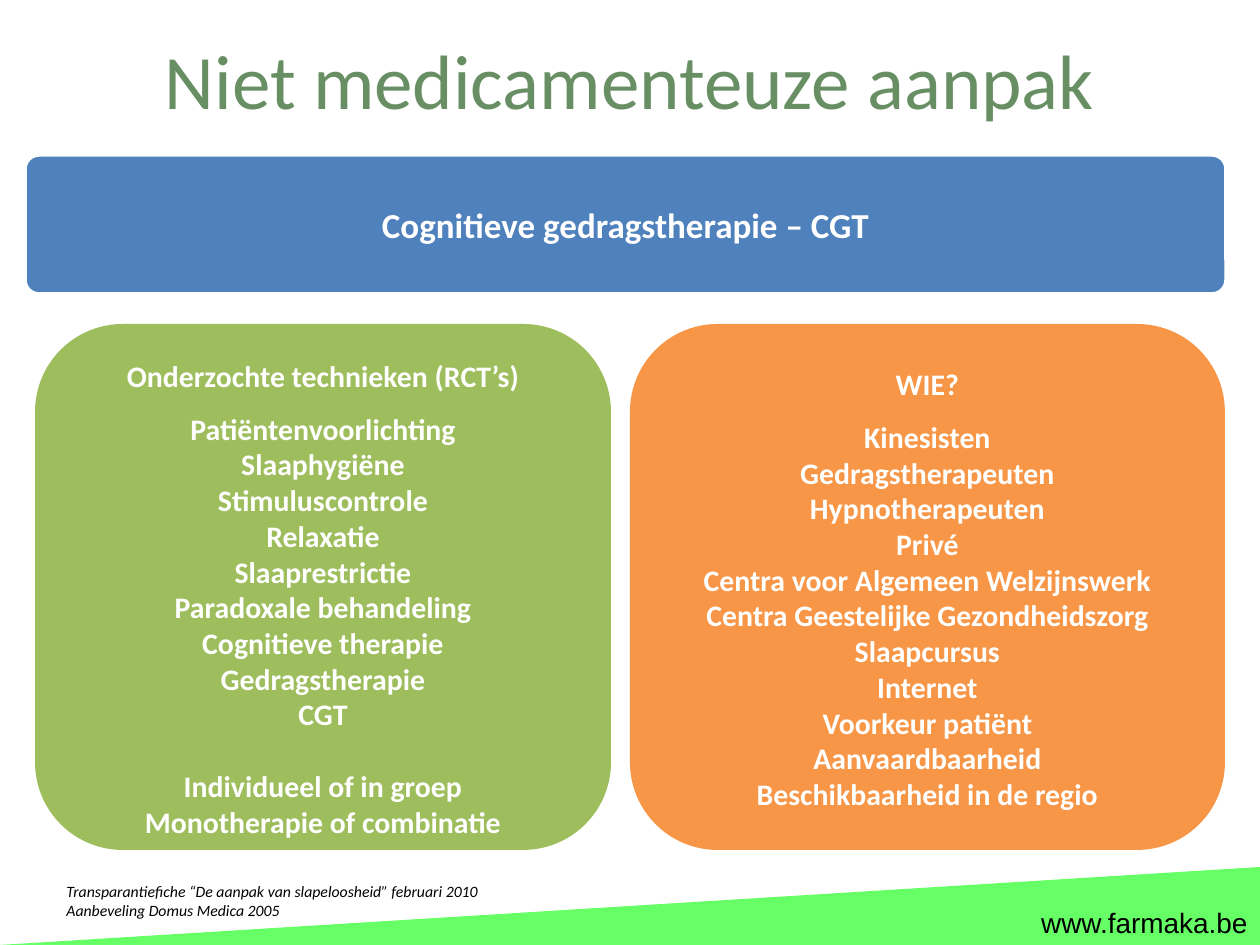
import pptx
import pptx.util
from pptx.dml.color import RGBColor
from pptx.enum.shapes import MSO_SHAPE
from pptx.enum.text import MSO_ANCHOR, PP_ALIGN

WHITE = RGBColor(0xFF, 0xFF, 0xFF)
BLACK = RGBColor(0, 0, 0)
TITLE_GREEN = RGBColor(0x68, 0x8F, 0x63)
BRIGHT_GREEN = RGBColor(0x66, 0xFF, 0x66)
BLUE = RGBColor(0x4F, 0x81, 0xBD)
OLIVE = RGBColor(0x9E, 0xBE, 0x5E)
ORANGE = RGBColor(0xF7, 0x96, 0x46)

# Content
TITLE = "Niet medicamenteuze aanpak"
BANNER = "Cognitieve gedragstherapie – CGT"
# Each panel: left, width, top inset (px), fill, groups of lines
PANELS = [
    (35, 576, 8, OLIVE, [
        ["Onderzochte technieken (RCT’s)"],
        ["Patiëntenvoorlichting", "Slaaphygiëne", "Stimuluscontrole", "Relaxatie",
         "Slaaprestrictie", "Paradoxale behandeling", "Cognitieve therapie",
         "Gedragstherapie", "CGT"],
        ["Individueel of in groep", "Monotherapie of combinatie"],
    ]),
    (630, 595, 16, ORANGE, [
        ["WIE?"],
        ["Kinesisten", "Gedragstherapeuten", "Hypnotherapeuten", "Privé",
         "Centra voor Algemeen Welzijnswerk", "Centra Geestelijke Gezondheidszorg",
         "Slaapcursus", "Internet", "Voorkeur patiënt", "Aanvaardbaarheid",
         "Beschikbaarheid in de regio"],
    ]),
]
GROUP_GAPS = [0, 9.8, 20.4]  # points above the first line of each group
SOURCES = ["Transparantiefiche “De aanpak van slapeloosheid” februari 2010",
           "Aanbeveling Domus Medica 2005"]
WEBSITE = "www.farmaka.be"

PANEL_TOP, PANEL_HEIGHT = 324, 526
WIDTH, HEIGHT = 1260, 945


def px(length):
    return pptx.util.Emu(round(length * 914400 / 126))


def write(shape, groups, size, color, font="Calibri", bold=False, italic=False,
          align=PP_ALIGN.CENTER, anchor=MSO_ANCHOR.MIDDLE, top_inset=6):
    frame = shape.text_frame
    frame.word_wrap = True
    frame.vertical_anchor = anchor
    frame.margin_top = px(top_inset)
    lines = [(line, gap if index == 0 else 0)
             for group, gap in zip(groups, GROUP_GAPS)
             for index, line in enumerate(group)]
    for number, (line, gap) in enumerate(lines):
        paragraph = frame.add_paragraph() if number else frame.paragraphs[0]
        paragraph.alignment = align
        paragraph.space_before = pptx.util.Pt(gap)
        run = paragraph.add_run()
        run.text = line
        run.font.name = font
        run.font.size = pptx.util.Pt(size)
        run.font.bold = bold
        run.font.italic = italic
        run.font.color.rgb = color


def add_filled(slide, preset, box, fill):
    shape = slide.shapes.add_shape(preset, *map(px, box))
    shape.shadow.inherit = False
    shape.fill.solid()
    shape.fill.fore_color.rgb = fill
    shape.line.fill.background()
    return shape


def main():
    presentation = pptx.Presentation()
    presentation.slide_width, presentation.slide_height = px(WIDTH), px(HEIGHT)
    slide = presentation.slides.add_slide(presentation.slide_layouts[5])

    # Footer wedge rising to the right, with the web address
    wedge = add_filled(slide, MSO_SHAPE.RIGHT_TRIANGLE, (0, 867, WIDTH, 78), BRIGHT_GREEN)
    wedge.element.spPr.get_or_add_xfrm().set("flipH", "1")
    website = slide.shapes.add_textbox(*map(px, (1004, 900, 256, 45)))
    write(website, [[WEBSITE]], 16, BLACK, font="Arial", align=PP_ALIGN.RIGHT,
          anchor=MSO_ANCHOR.TOP)

    # Title
    title = slide.shapes.title
    title.left, title.top, title.width, title.height = map(px, (0, 0, WIDTH, 158))
    write(title, [[TITLE]], 44, TITLE_GREEN)

    # Banner
    banner = add_filled(slide, MSO_SHAPE.ROUNDED_RECTANGLE, (25, 155, 1201, 139), BLUE)
    banner.adjustments[0] = 0.1
    banner.line.color.rgb = WHITE
    banner.line.width = pptx.util.Pt(2)
    write(banner, [[BANNER]], 20, WHITE, bold=True)

    # Two panels
    for left, width, top_inset, fill, groups in PANELS:
        panel = add_filled(slide, MSO_SHAPE.ROUNDED_RECTANGLE,
                           (left, PANEL_TOP, width, PANEL_HEIGHT), fill)
        write(panel, groups, 17, WHITE, bold=True, anchor=MSO_ANCHOR.TOP,
              top_inset=top_inset)

    # Sources
    sources = slide.shapes.add_textbox(*map(px, (54, 876, 850, 50)))
    write(sources, [SOURCES], 9, BLACK, italic=True, align=PP_ALIGN.LEFT,
          anchor=MSO_ANCHOR.TOP)

    presentation.save("out.pptx")


if __name__ == "__main__":
    main()
